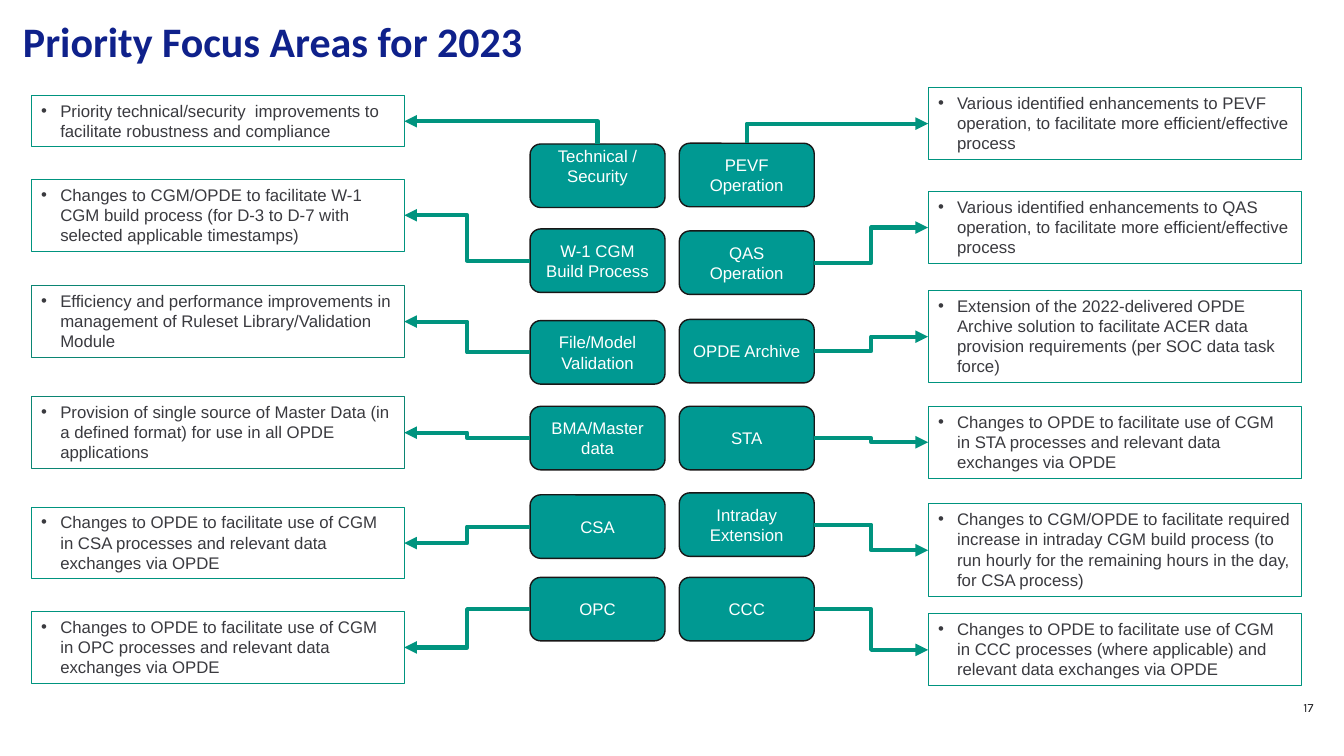
import dataclasses

import lxml.etree
import pptx
import pptx.dml.color
import pptx.enum.shapes
import pptx.enum.text
import pptx.oxml.ns
import pptx.util

Cm, Pt = pptx.util.Cm, pptx.util.Pt
RGB = pptx.dml.color.RGBColor.from_string
SHAPE = pptx.enum.shapes.MSO_SHAPE
ALIGN = pptx.enum.text.PP_ALIGN
ANCHOR = pptx.enum.text.MSO_ANCHOR
qn = pptx.oxml.ns.qn


@dataclasses.dataclass(frozen=True)
class Theme:
    title: str = "0F218B"
    pill: str = "009992"
    pill_edge: str = "181717"
    pill_text: str = "FFFFFF"
    accent: str = "00947F"
    accent_dark: str = "0B8573"
    body: str = "3A3A3F"
    number: str = "1D1D20"
    title_size: int = 30
    body_size: int = 12
    number_size: int = 9


theme = Theme()


def write_text(sp, text, size=theme.body_size, color=theme.body, font="Arial",
               bold=False, align=ALIGN.LEFT, anchor=ANCHOR.MIDDLE, bullet=False):
    tf = sp.text_frame
    tf.word_wrap = True
    tf.vertical_anchor = anchor
    for i, line in enumerate(text.split("\n")):
        p = tf.paragraphs[0] if i == 0 else tf.add_paragraph()
        p.alignment = align
        if bullet:
            pPr = p._p.get_or_add_pPr()
            pPr.set("marL", str(Cm(0.48)))
            pPr.set("indent", str(-Cm(0.48)))
            lxml.etree.SubElement(pPr, qn("a:buFont")).set("typeface", "Arial")
            lxml.etree.SubElement(pPr, qn("a:buChar")).set("char", "•")
        r = p.add_run()
        r.text = line
        r.font.name, r.font.size, r.font.bold = font, Pt(size), bold
        r.font.color.rgb = RGB(color)
    return tf


prs = pptx.Presentation()
prs.slide_width, prs.slide_height = Cm(33.87), Cm(19.05)
s = prs.slides.add_slide(prs.slide_layouts[6])

# Title and page number
sp = s.shapes.add_textbox(Cm(0.33), Cm(0.25), Cm(28.2), Cm(1.55))
write_text(sp, "Priority Focus Areas for 2023", size=theme.title_size,
           color=theme.title, font="Calibri", bold=True)
sp = s.shapes.add_textbox(Cm(17.15), Cm(17.32), Cm(16.2), Cm(1.02))
write_text(sp, "17", size=theme.number_size, color=theme.number, font="Karla",
           align=ALIGN.RIGHT)

# Each area: pill label, pill top, note top, note line count, note
left_areas = [
    ("Technical / Security", 3.63, 2.41, 2,
     "Priority technical/security  improvements to facilitate robustness and compliance"),
    ("W-1 CGM Build Process", 5.77, 4.52, 3,
     "Changes to CGM/OPDE to facilitate W-1 CGM build process "
     "(for D-3 to D-7 with selected applicable timestamps)"),
    ("File/Model Validation", 8.08, 7.2, 3,
     "Efficiency and performance improvements in management of "
     "Ruleset Library/Validation Module"),
    ("BMA/Master data", 10.24, 10, 3,
     "Provision of single source of Master Data (in a defined format) "
     "for use in all OPDE applications"),
    ("CSA", 12.47, 12.78, 3,
     "Changes to OPDE to facilitate use of CGM in CSA processes "
     "and relevant data exchanges via OPDE"),
    ("OPC", 14.55, 15.41, 3,
     "Changes to OPDE to facilitate use of CGM in OPC processes "
     "and relevant data exchanges via OPDE"),
]
right_areas = [
    ("PEVF Operation", 3.61, 2.21, 3,
     "Various identified enhancements to PEVF operation, "
     "to facilitate more efficient/effective process"),
    ("QAS\nOperation", 5.82, 4.83, 3,
     "Various identified enhancements to QAS operation, "
     "to facilitate more efficient/effective process"),
    ("OPDE Archive", 8.05, 7.32, 4,
     "Extension of the 2022-delivered OPDE Archive solution to facilitate "
     "ACER data provision requirements (per SOC data task force)"),
    ("STA", 10.24, 10.24, 3,
     "Changes to OPDE to facilitate use of CGM in STA processes "
     "and relevant data exchanges via OPDE"),
    ("Intraday Extension", 12.42, 12.7, 4,
     "Changes to CGM/OPDE to facilitate required increase in intraday CGM build "
     "process (to run hourly for the remaining hours in the day, for CSA process)"),
    ("CCC", 14.55, 15.47, 3,
     "Changes to OPDE to facilitate use of CGM in CCC processes "
     "(where applicable) and relevant data exchanges via OPDE"),
]

# Columns: areas, pill left, note left, pill side, note side, darker-edged rows
TOP, LEFT, RIGHT = 0, 1, 3
columns = [
    (left_areas, 13.36, 0.79, LEFT, RIGHT, (2, 3)),
    (right_areas, 17.12, 23.39, RIGHT, LEFT, ()),
]
for areas, pill_x, note_x, pill_side, note_side, dark_rows in columns:
    for row, (label, pill_y, note_y, lines, note_text) in enumerate(areas):
        # Area pill
        pill = s.shapes.add_shape(SHAPE.ROUNDED_RECTANGLE, Cm(pill_x), Cm(pill_y),
                                  Cm(3.4), Cm(1.6))
        pill.shadow.inherit = False
        pill.fill.solid()
        pill.fill.fore_color.rgb = RGB(theme.pill)
        pill.line.color.rgb = RGB(theme.pill_edge)
        pill.line.width = Pt(1)
        tf = write_text(pill, label, color=theme.pill_text, align=ALIGN.CENTER)
        tf.margin_left = tf.margin_right = Cm(0.2)
        if label == "Technical / Security":
            tf.margin_top, tf.margin_bottom = Cm(0), Cm(0.5)

        # Note
        note = s.shapes.add_shape(SHAPE.RECTANGLE, Cm(note_x), Cm(note_y),
                                  Cm(9.4), Cm(0.25 + 0.52 * lines))
        note.shadow.inherit = False
        note.fill.background()
        note.line.color.rgb = RGB(theme.accent_dark if row in dark_rows else theme.accent)
        note.line.width = Pt(0.75)
        tf = write_text(note, note_text, anchor=ANCHOR.TOP, bullet=True)
        tf.auto_size = pptx.enum.text.MSO_AUTO_SIZE.SHAPE_TO_FIT_TEXT

        # Arrow to the note; in the top row one bend rises from the pill's top
        c = s.shapes.add_connector(pptx.enum.shapes.MSO_CONNECTOR.ELBOW, 0, 0, 0, 0)
        if row == 0:
            c.begin_connect(note, note_side)
            c.end_connect(pill, TOP)
            c._element.spPr.find(qn("a:prstGeom")).set("prst", "bentConnector2")
        else:
            c.begin_connect(pill, pill_side)
            c.end_connect(note, note_side)
        c.line.color.rgb = RGB(theme.accent)
        c.line.width = Pt(3)
        ln = c._element.spPr.find(qn("a:ln"))
        arrow_end = "a:headEnd" if row == 0 else "a:tailEnd"
        lxml.etree.SubElement(ln, qn(arrow_end)).set("type", "triangle")
        lxml.etree.SubElement(c._element.spPr, qn("a:effectLst"))

prs.save("out.pptx")
